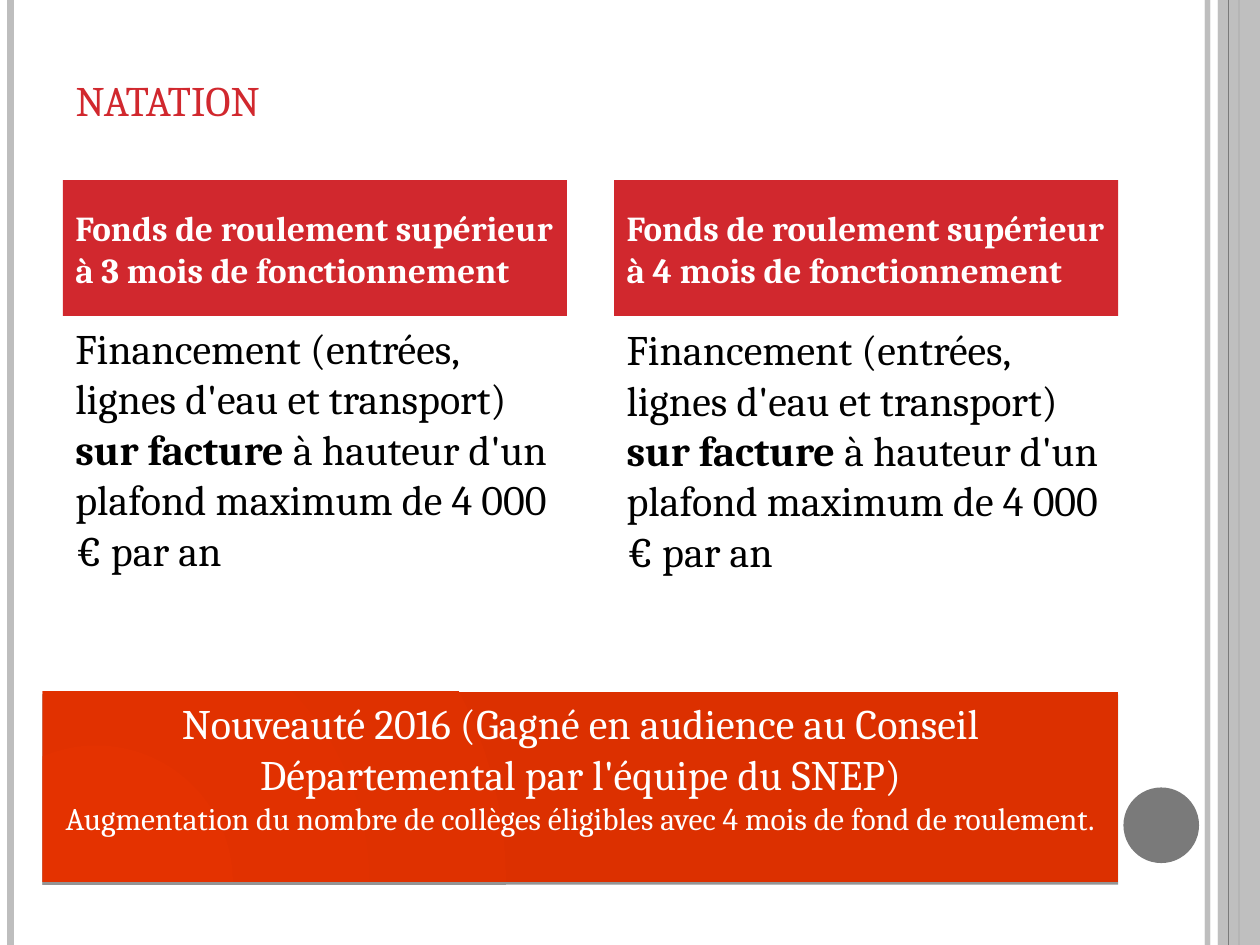
import pptx
import pptx.util
import pptx.dml.color
import pptx.enum.shapes
import pptx.enum.text
import pptx.oxml
import pptx.oxml.ns
import lxml.etree

Pt = pptx.util.Pt
RGB = pptx.dml.color.RGBColor
Shape = pptx.enum.shapes.MSO_SHAPE
Anchor = pptx.enum.text.MSO_ANCHOR
Align = pptx.enum.text.PP_ALIGN
qn = pptx.oxml.ns.qn

RED = RGB(0xD1, 0x28, 0x2E)
FLAME = RGB(0xE4, 0x32, 0x00)
RUST = RGB(0xDC, 0x30, 0x00)
SILVER = RGB(0xBE, 0xBE, 0xBE)
GREY = RGB(0x7A, 0x7A, 0x7A)
WHITE = RGB(0xFF, 0xFF, 0xFF)
BLACK = RGB(0, 0, 0)
FONT = "Cambria"
HIGH = 540
BODY = ["Financement (entrées, lignes d'eau et transport) ", "sur facture",
        " à hauteur d'un plafond maximum de 4 000 € par an"]


def fade(item, share):
    """Make the colours of an element partly transparent."""
    for tint in item.element.spPr.iter(qn("a:srgbClr")):
        lxml.etree.SubElement(tint, qn("a:alpha")).set("val", str(share * 1000))


def rule(slide, left, width, color, share=100):
    """Draw a vertical line over the full height."""
    line = slide.shapes.add_connector(
        pptx.enum.shapes.MSO_CONNECTOR.STRAIGHT, Pt(left), 0, Pt(left), Pt(HIGH))
    line.line.color.rgb = color
    line.line.width = Pt(width)
    if share < 100:
        fade(line, share)
    lxml.etree.SubElement(line.element.spPr, qn("a:effectLst"))


def block(slide, kind, box, color):
    """Add a flat filled shape."""
    item = slide.shapes.add_shape(kind, *map(Pt, box))
    item.shadow.inherit = False
    item.fill.solid()
    item.fill.fore_color.rgb = color
    item.line.fill.background()
    return item


def style(para, size, color, bold=False):
    """Format all runs of a paragraph."""
    for run in para.runs:
        run.font.name = FONT
        run.font.size = Pt(size)
        run.font.color.rgb = color
        run.font.bold = bold


def frame(slide):
    """Draw the side bars and the dot."""
    bar = (696, 0, 24, HIGH)
    rule(slide, 690, 3, SILVER, 93)
    fade(block(slide, Shape.RECTANGLE, bar, SILVER), 87)
    rule(slide, 690, 3, SILVER, 93)
    rule(slide, 6, 4.5, SILVER)
    rule(slide, 708, 1.5, GREY)
    fade(block(slide, Shape.RECTANGLE, bar, SILVER), 87)
    rule(slide, 702, 0.75, GREY)
    block(slide, Shape.OVAL, (642, 450, 43.2, 43.2), GREY)


def title(slide, text):
    """Fill the title in small capitals."""
    item = slide.shapes.title
    item.left, item.top, item.width, item.height = map(Pt, (36, 21.6, 594, 90))
    body = item.text_frame
    body.text = text
    body.vertical_anchor = Anchor.BOTTOM
    body.margin_bottom = Pt(39)
    para = body.paragraphs[0]
    para.alignment = Align.LEFT
    style(para, 30, RED)
    for mark in item.element.iter(qn("a:rPr")):
        mark.set("cap", "small")


def column(slide, left, top, head):
    """Add a red heading with its text below."""
    item = block(slide, Shape.RECTANGLE, (left, 103, 288, 77.5), RED)
    item.text_frame.text = head
    item.text_frame.vertical_anchor = Anchor.MIDDLE
    para = item.text_frame.paragraphs[0]
    para.alignment = Align.LEFT
    para.space_before = Pt(6)
    style(para, 20, WHITE, True)
    note = slide.shapes.add_textbox(Pt(left), Pt(top), Pt(288), Pt(190))
    note.text_frame.word_wrap = True
    para = note.text_frame.paragraphs[0]
    para.space_before = Pt(6)
    for text in BODY:
        para.add_run().text = text
    style(para, 24, BLACK)
    para.runs[1].font.bold = True


def banner(slide, lines):
    """Add the shaded news panel."""
    item = block(slide, Shape.RECTANGLE, (24.3, 395.3, 614.7, 108.7), RUST)
    item.fill.gradient()
    for stop, color, spot in zip(item.fill.gradient_stops, (FLAME, RUST), (0, 1)):
        stop.color.rgb = color
        stop.position = spot
    grad = item.element.spPr.find(qn("a:gradFill"))
    grad.remove(grad.find(qn("a:lin")))
    path = lxml.etree.SubElement(grad, qn("a:path"), path="circle")
    lxml.etree.SubElement(path, qn("a:fillToRect"),
                          l="5000", t="100000", r="95000", b="0")
    glow = lxml.etree.SubElement(
        item.element.spPr.find(qn("a:effectLst")), qn("a:outerShdw"),
        blurRad="0", dist=str(Pt(1.6)), dir="5400000", rotWithShape="0")
    tint = lxml.etree.SubElement(glow, qn("a:srgbClr"), val=str(BLACK))
    lxml.etree.SubElement(tint, qn("a:alpha"), val="42000")
    body = item.text_frame
    body.vertical_anchor = Anchor.TOP
    body.text = "\n".join(lines)
    for para, size in zip(body.paragraphs, (24, 18)):
        para.alignment = Align.CENTER
        style(para, size, WHITE)


def main():
    """Build the slide and save it."""
    deck = pptx.Presentation()
    deck.slide_width, deck.slide_height = Pt(720), Pt(HIGH)
    slide = deck.slides.add_slide(deck.slide_layouts[5])
    frame(slide)
    title(slide, "natation")
    for left, top, count in ((36, 180.7, 3), (351, 181.4, 4)):
        column(slide, left, top,
               f"Fonds de roulement supérieur à {count} mois de fonctionnement")
    banner(slide, [
        "Nouveauté 2016 (Gagné en audience au Conseil Départemental "
        "par l'équipe du SNEP)",
        "Augmentation du nombre de collèges éligibles avec 4 mois "
        "de fond de roulement."])
    deck.save("out.pptx")


if __name__ == "__main__":
    main()
